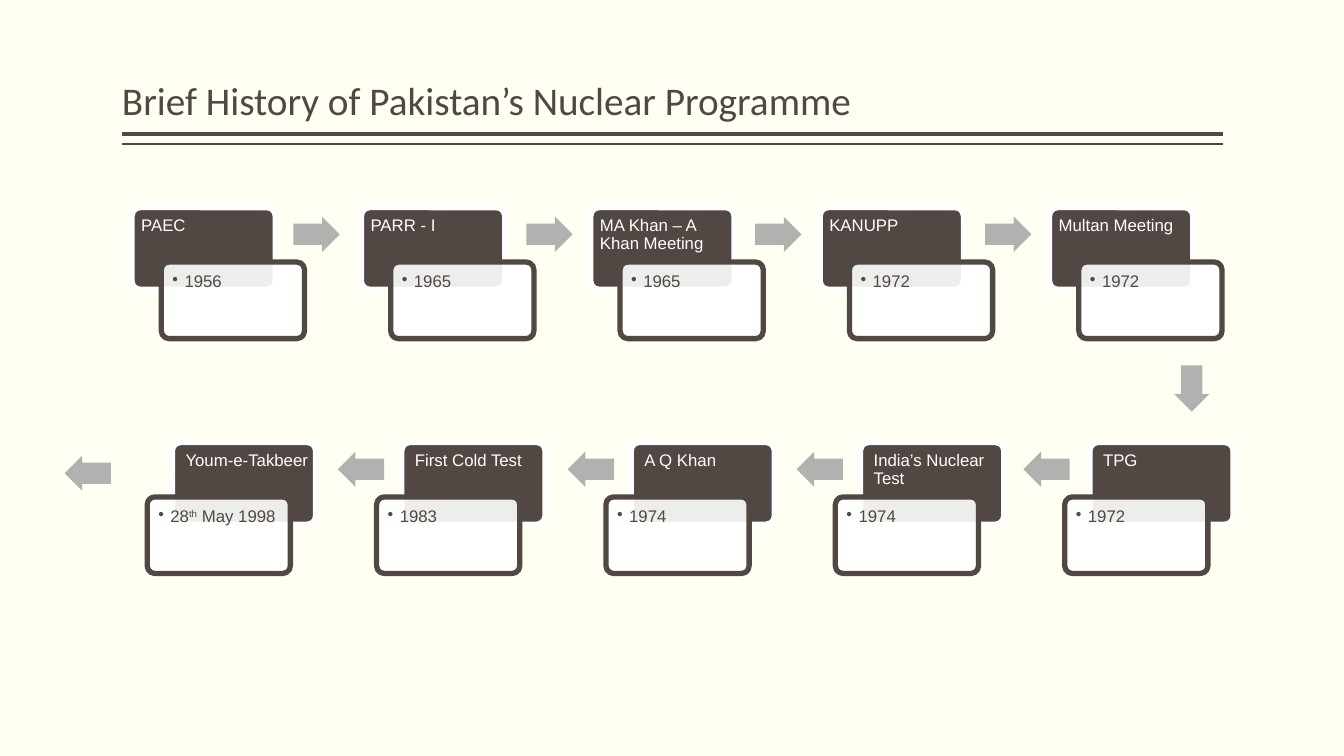
from pptx import Presentation
from pptx.dml.color import RGBColor
from pptx.enum.shapes import MSO_CONNECTOR as CONNECTOR, MSO_SHAPE as SHAPE
from pptx.enum.text import MSO_ANCHOR as ANCHOR
from pptx.oxml.ns import qn
from pptx.util import Inches, Pt
from lxml.etree import SubElement

TITLE = "Brief History of Pakistan’s Nuclear Programme"
TOP_EVENTS = [
    ("PAEC", ["1956"]),
    ("PARR - I", ["1965"]),
    ("MA Khan – A Khan Meeting", ["1965"]),
    ("KANUPP", ["1972"]),
    ("Multan Meeting", ["1972"]),
]
BOTTOM_EVENTS = [
    ("Youm-e-Takbeer", ["28", "th", " May 1998"]),
    ("First Cold Test", ["1983"]),
    ("A Q Khan", ["1974"]),
    ("India’s Nuclear Test", ["1974"]),
    ("TPG", ["1972"]),
]
ROWS = [
    dict(events=TOP_EVENTS, left=1.31, top=2.06, label_shift=0, date_shift=0.29),
    dict(events=BOTTOM_EVENTS, left=1.71, top=4.39, label_shift=0.04, date_shift=-0.25),
]
ARROWS = [
    (0, 2.15, [2.91, 5.22, 7.49, 9.77]),
    (90, 3.68, [11.59]),
    (180, 4.48, [10.15, 7.9, 5.63, 3.35]),
    (180, 4.52, [0.64]),
]
RULES = [(1.33, 3), (1.43, 1)]
STEP = 2.275
BROWN, WHITE, GREY, CREAM = "514843", "FFFFFF", "B3B1B0", "FFFFF3"


def paint(color_format, color):
    color_format.rgb = RGBColor.from_string(color)


def add_text(slide, parts, box, size=12, font="Arial", color=BROWN,
             anchor=ANCHOR.TOP, insets=(0.09, 0.09, 0.09, 0.05), bullet=False):
    frame = slide.shapes.add_textbox(*map(Inches, box)).text_frame
    frame.word_wrap = True
    frame.vertical_anchor = anchor
    (frame.margin_left, frame.margin_top,
     frame.margin_right, frame.margin_bottom) = map(Inches, insets)
    paragraph = frame.paragraphs[0]
    paragraph.line_spacing = 0.9
    if bullet:
        properties = paragraph._p.get_or_add_pPr()
        properties.set("marL", str(Inches(0.12)))
        properties.set("indent", str(Inches(-0.12)))
        SubElement(properties, qn("a:buChar")).set("char", "•")
    for index, part in enumerate(parts):
        run = paragraph.add_run()
        run.text = part
        run.font.size = Pt(size)
        run.font.name = font
        paint(run.font.color, color)
        if index % 2:
            run._r.get_or_add_rPr().set("baseline", "30000")


def add_block(slide, kind, box, fill, line=None, adjustments=(0.1,), opacity=100):
    shape = slide.shapes.add_shape(kind, *map(Inches, box))
    shape.shadow.inherit = False
    for index, value in enumerate(adjustments):
        shape.adjustments[index] = value
    shape.fill.solid()
    paint(shape.fill.fore_color, fill)
    if opacity < 100:
        color = shape._element.spPr.find(qn("a:solidFill"))[0]
        SubElement(color, qn("a:alpha")).set("val", str(opacity * 1000))
    if line:
        paint(shape.line.color, line)
        shape.line.width = Pt(3.78)
    else:
        shape.line.fill.background()
    return shape


def add_rule(slide, y, width):
    rule = slide.shapes.add_connector(
        CONNECTOR.STRAIGHT, Inches(1.21), Inches(y), Inches(12.13), Inches(y))
    paint(rule.line.color, BROWN)
    rule.line.width = Pt(width)
    SubElement(rule._element.spPr, qn("a:effectLst"))


def add_event(slide, name, date, left, top, label_shift, date_shift):
    add_block(slide, SHAPE.ROUNDED_RECTANGLE, (left, top, 1.42, 0.81), BROWN, WHITE)
    add_text(slide, [name], (left + label_shift, top, 1.42, 0.54), color=WHITE)
    date_left, date_top = left + date_shift, top + 0.54
    add_block(slide, SHAPE.ROUNDED_RECTANGLE, (date_left, date_top, 1.42, 0.76),
              WHITE, BROWN, opacity=90)
    add_text(slide, date, (date_left + 0.02, date_top + 0.02, 1.37, 0.71),
             insets=(0.09,) * 4, bullet=True)


def main():
    presentation = Presentation()
    presentation.slide_width = Inches(13.33)
    presentation.slide_height = Inches(7.5)
    slide = presentation.slides.add_slide(presentation.slide_layouts[6])
    slide.background.fill.solid()
    paint(slide.background.fill.fore_color, CREAM)

    for y, width in RULES:
        add_rule(slide, y, width)
    add_text(slide, [TITLE], (1.21, 0.08, 10.92, 1.2), size=28, font="Calibri",
             anchor=ANCHOR.BOTTOM, insets=(0, 0.05, 0, 0.05))

    for row in ROWS:
        for column, (name, date) in enumerate(row["events"]):
            add_event(slide, name, date, row["left"] + column * STEP, row["top"],
                      row["label_shift"], row["date_shift"])

    for rotation, top, lefts in ARROWS:
        for left in lefts:
            arrow = add_block(slide, SHAPE.RIGHT_ARROW, (left, top, 0.46, 0.35),
                              GREY, adjustments=(0.6, 0.5))
            arrow.rotation = rotation

    presentation.save("out.pptx")


if __name__ == "__main__":
    main()
